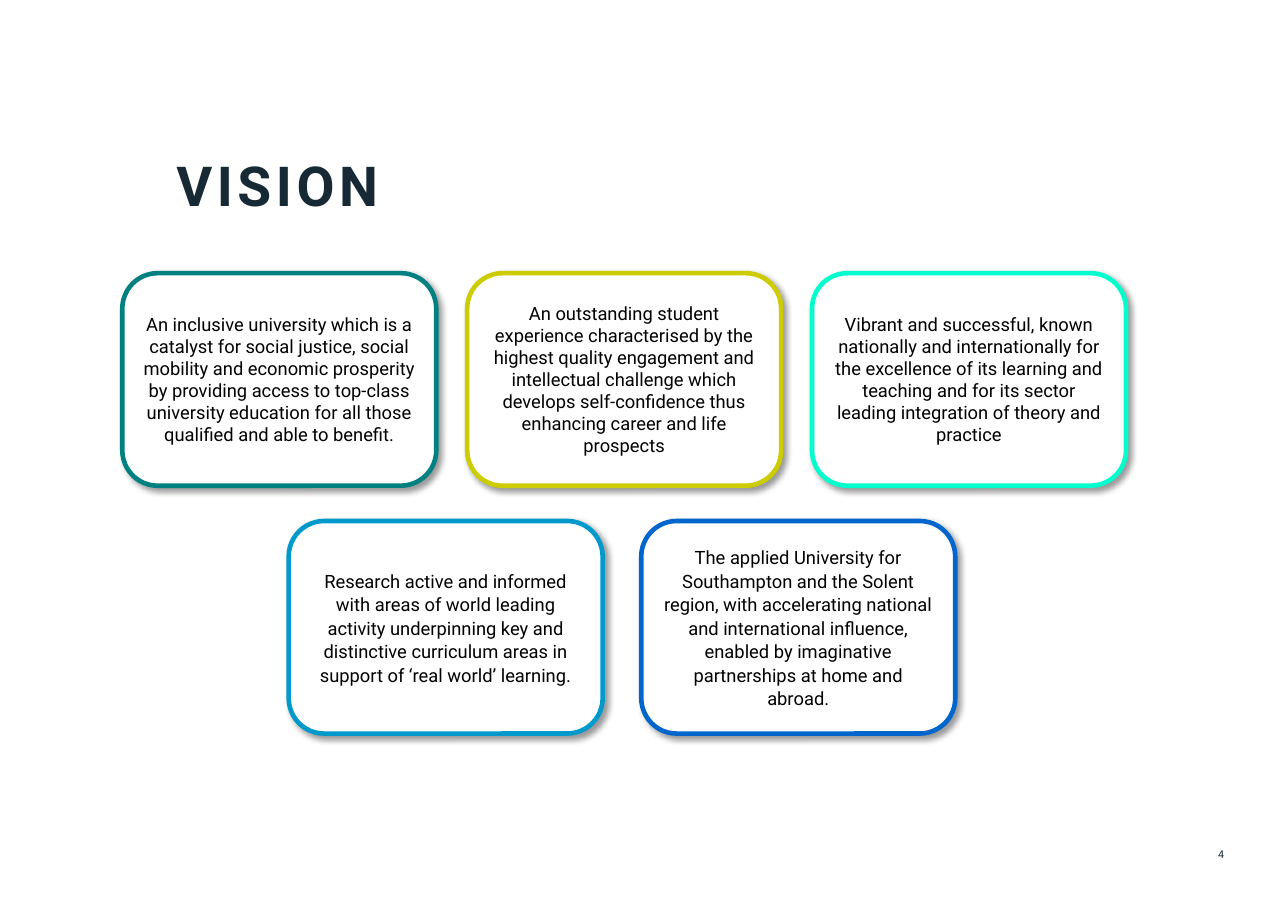
from dataclasses import dataclass
from typing import Any, Optional

import pptx
import pptx.dml.color
import pptx.enum.shapes
import pptx.enum.text
import pptx.oxml
import pptx.oxml.ns
import pptx.util

RGBColor = pptx.dml.color.RGBColor
Pt = pptx.util.Pt
Align = pptx.enum.text.PP_ALIGN
Anchor = pptx.enum.text.MSO_ANCHOR

EMU_PER_PX = 9144  # 100 px to the inch
TITLE_ONLY_LAYOUT = 5
FONT_NAME = "Roboto"

NAVY = RGBColor(0x17, 0x29, 0x34)
BLACK = RGBColor(0x00, 0x00, 0x00)
WHITE = RGBColor(0xFF, 0xFF, 0xFF)
TEAL = RGBColor(0x00, 0x80, 0x80)
OLIVE = RGBColor(0xCC, 0xCC, 0x00)
AQUA = RGBColor(0x00, 0xFF, 0xCC)
SKY = RGBColor(0x00, 0x99, 0xCC)
BLUE = RGBColor(0x00, 0x66, 0xCC)

CARD_WIDTH, CARD_HEIGHT = 285, 193

NO_MARGINS = {
    "margin_left": 0, "margin_top": 0, "margin_right": 0, "margin_bottom": 0,
    "word_wrap": True, "auto_size": pptx.enum.text.MSO_AUTO_SIZE.NONE,
}
TITLE_FONT = {"name": FONT_NAME, "size": Pt(36), "bold": True}
NUMBER_FONT = {"name": FONT_NAME, "size": Pt(7)}
CARD_FONT = {"name": FONT_NAME, "size": Pt(12)}

SHADOW_XML = (
    f'<a:outerShdw {pptx.oxml.ns.nsdecls("a")} blurRad="{Pt(4)}" dist="{Pt(3)}" '
    'dir="2700000" algn="tl" rotWithShape="0">'
    '<a:srgbClr val="000000"><a:alpha val="40000"/></a:srgbClr></a:outerShdw>'
)


@dataclass(frozen=True)
class Card:
    color: RGBColor
    text: str


@dataclass(frozen=True)
class CardRow:
    left: int
    top: int
    pitch: int
    paragraph_format: dict[str, Any]
    cards: tuple[Card, ...]


ROWS = (
    CardRow(111, 248, 313, {"alignment": Align.CENTER}, (
        Card(TEAL, "An inclusive university which is a catalyst for social justice, "
                   "social mobility and economic prosperity by providing access to "
                   "top-class university education for all those qualified and able "
                   "to benefit."),
        Card(OLIVE, "An outstanding student experience characterised by the highest "
                    "quality engagement and intellectual challenge which develops "
                    "self-confidence thus enhancing career and life prospects"),
        Card(AQUA, "Vibrant and successful, known nationally and internationally for "
                   "the excellence of its learning and teaching and for its sector "
                   "leading integration of theory and practice"),
    )),
    CardRow(262, 473, 320,
            {"alignment": Align.CENTER, "line_spacing": 1.07, "space_after": Pt(8)}, (
        Card(SKY, "Research active and informed with areas of world leading activity "
                  "underpinning key and distinctive curriculum areas in support of "
                  "‘real world’ learning."),
        Card(BLUE, "The applied University for Southampton and the Solent region, with "
                   "accelerating national and international influence, enabled by "
                   "imaginative partnerships at home and abroad."),
    )),
)


def px(length: int) -> int:
    return length * EMU_PER_PX


def set_attributes(target: Any, values: dict[str, Any]) -> None:
    for name, value in values.items():
        setattr(target, name, value)


def write_text(shape: Any, text: str, font: dict[str, Any], color: RGBColor,
               frame_format: dict[str, Any], paragraph_format: dict[str, Any],
               letter_spacing: Optional[float] = None) -> None:
    """Fill the shape with one formatted run; letter spacing is in points."""
    set_attributes(shape.text_frame, frame_format)
    paragraph = shape.text_frame.paragraphs[0]
    set_attributes(paragraph, paragraph_format)
    run = paragraph.add_run()
    run.text = text
    set_attributes(run.font, font)
    run.font.color.rgb = color
    if letter_spacing is not None:
        run._r.get_or_add_rPr().set("spc", str(round(letter_spacing * 100)))


def add_title(slide: Any) -> None:
    title = slide.shapes.title
    set_attributes(title, {"left": px(160), "top": px(134),
                           "width": px(863), "height": px(572)})
    write_text(title, "VISION", TITLE_FONT, NAVY,
               NO_MARGINS | {"vertical_anchor": Anchor.TOP},
               {"alignment": Align.LEFT, "line_spacing": 1.06}, 3)


def add_page_number(slide: Any) -> None:
    box = slide.shapes.add_textbox(px(1023), px(764), px(88), px(22))
    write_text(box, "4", NUMBER_FONT, NAVY,
               NO_MARGINS | {"vertical_anchor": Anchor.MIDDLE},
               {"alignment": Align.RIGHT}, 1.5)


def add_card(slide: Any, card: Card, left: int, top: int,
             paragraph_format: dict[str, Any]) -> None:
    shape = slide.shapes.add_shape(
        pptx.enum.shapes.MSO_SHAPE.ROUNDED_RECTANGLE,
        px(left), px(top), px(CARD_WIDTH), px(CARD_HEIGHT))
    shape.fill.solid()
    shape.fill.fore_color.rgb = WHITE
    shape.line.color.rgb = card.color
    shape.line.width = Pt(3)
    shape.shadow.inherit = False
    effects = shape._element.spPr.find(pptx.oxml.ns.qn("a:effectLst"))
    effects.append(pptx.oxml.parse_xml(SHADOW_XML))
    write_text(shape, card.text, CARD_FONT, BLACK,
               {"word_wrap": True, "vertical_anchor": Anchor.MIDDLE}, paragraph_format)


def main() -> None:
    presentation = pptx.Presentation()
    presentation.slide_width = px(1169)
    presentation.slide_height = px(827)
    layout = presentation.slide_layouts[TITLE_ONLY_LAYOUT]
    slide = presentation.slides.add_slide(layout)
    add_title(slide)
    add_page_number(slide)
    for row in ROWS:
        for column, card in enumerate(row.cards):
            add_card(slide, card, row.left + column * row.pitch, row.top,
                     row.paragraph_format)
    presentation.save("out.pptx")


if __name__ == "__main__":
    main()
